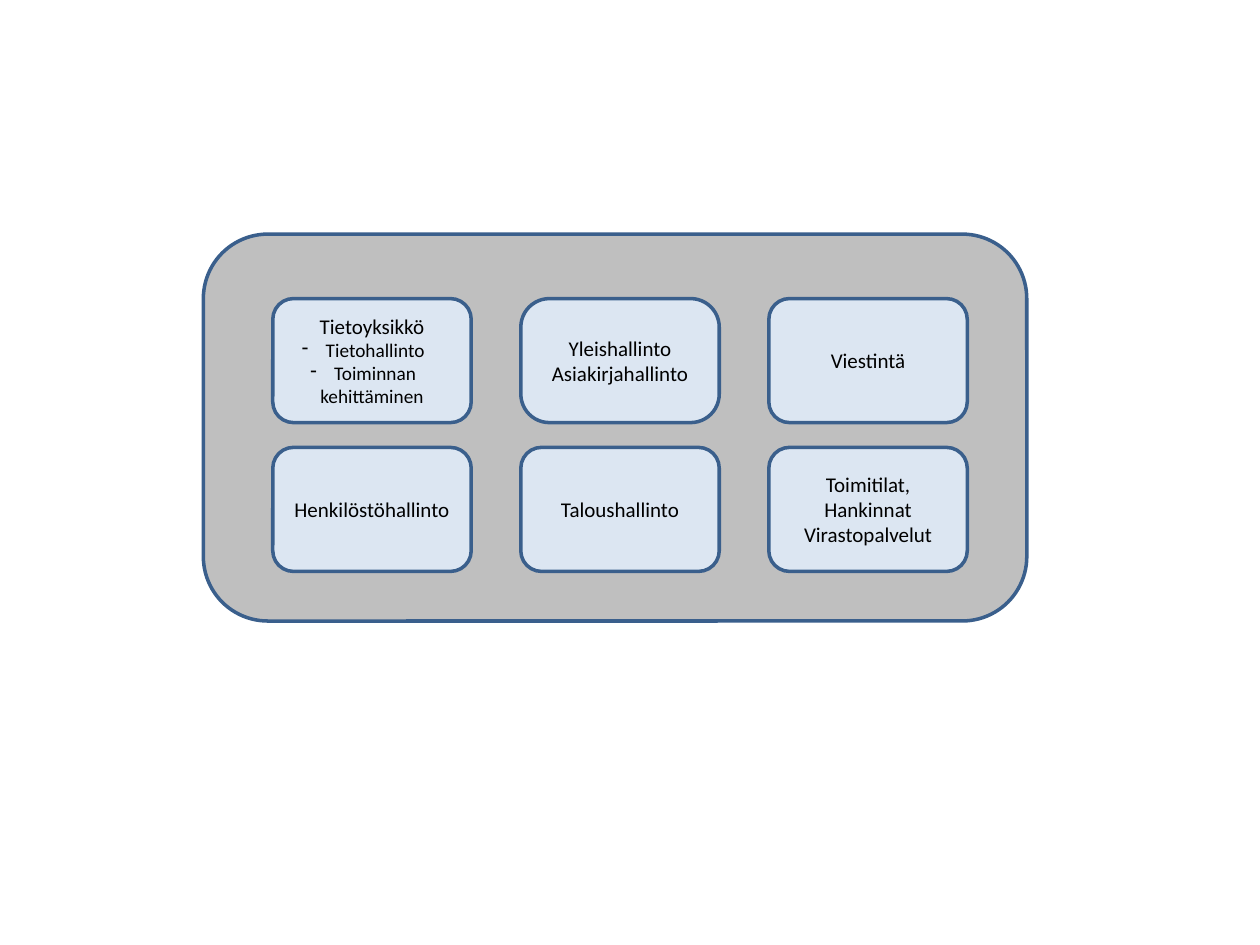
from lxml.etree import SubElement
from pptx import Presentation
from pptx.dml.color import RGBColor
from pptx.enum.shapes import MSO_SHAPE
from pptx.enum.text import MSO_ANCHOR, PP_ALIGN
from pptx.oxml.ns import qn
from pptx.util import Cm, Pt


def tint(fmt, code):
    """Give a fill or font colour a solid hex value."""
    if hasattr(fmt, "solid"):
        fmt.solid()
        fmt.fore_color.rgb = RGBColor.from_string(code)
    else:
        fmt.color.rgb = RGBColor.from_string(code)


class Deck:
    """Hold the style and the current slide."""

    font = "Calibri"
    ink = "000000"
    edge = "3A5F8C"

    def __init__(self, file):
        """Add a blank slide to the file."""
        self.slide = file.slides.add_slide(file.slide_layouts[6])

    def box(self, left, top, width, height, fill, curve=None):
        """Draw a rounded box."""
        shape = self.slide.shapes.add_shape(
            MSO_SHAPE.ROUNDED_RECTANGLE, Cm(left), Cm(top), Cm(width), Cm(height))
        shape.shadow.inherit = False
        tint(shape.fill, fill)
        tint(shape.line, self.edge)
        shape.line.width = Pt(2)
        if curve:
            shape.adjustments[0] = curve
        return shape

    def text(self, shape, lines, items=()):
        """Write centred lines, then dashed items."""
        frame = shape.text_frame
        frame.word_wrap = True
        frame.vertical_anchor = MSO_ANCHOR.MIDDLE
        rows = [(line, 12) for line in lines] + [(item, 11) for item in items]
        for pos, (words, size) in enumerate(rows):
            para = frame.add_paragraph() if pos else frame.paragraphs[0]
            para.alignment = PP_ALIGN.CENTER
            run = para.add_run()
            run.text = words
            run.font.name = self.font
            run.font.size = Pt(size)
            tint(run.font, self.ink)
            if pos >= len(lines):
                self.dash(para)

    def dash(self, para):
        """Set a hanging dash before a paragraph."""
        props = para._p.get_or_add_pPr()
        props.set("marL", "0")
        props.set("indent", str(-Cm(0.48)))
        SubElement(props, qn("a:buFontTx"))
        SubElement(props, qn("a:buChar")).set("char", "-")


def main():
    """Build the chart of units."""
    file = Presentation()
    file.slide_width, file.slide_height = Cm(25.4), Cm(19.05)
    deck = Deck(file)
    deck.box(4.1, 4.72, 16.6, 7.8, "BFBFBF")
    units = [
        (["Tietoyksikkö"], ["Tietohallinto", "Toiminnan kehittäminen"], None),
        (["Yleishallinto", "Asiakirjahallinto"], [], 0.23),
        (["Viestintä"], [], None),
        (["Henkilöstöhallinto"], [], None),
        (["Taloushallinto"], [], None),
        (["Toimitilat,", "Hankinnat", "Virastopalvelut"], [], None),
    ]
    for pos, (lines, items, curve) in enumerate(units):
        row, col = divmod(pos, 3)
        shape = deck.box(5.5 + 5 * col, 6.02 + 3 * row, 4, 2.5, "DCE6F2", curve)
        deck.text(shape, lines, items)
    file.save("out.pptx")


if __name__ == "__main__":
    main()
